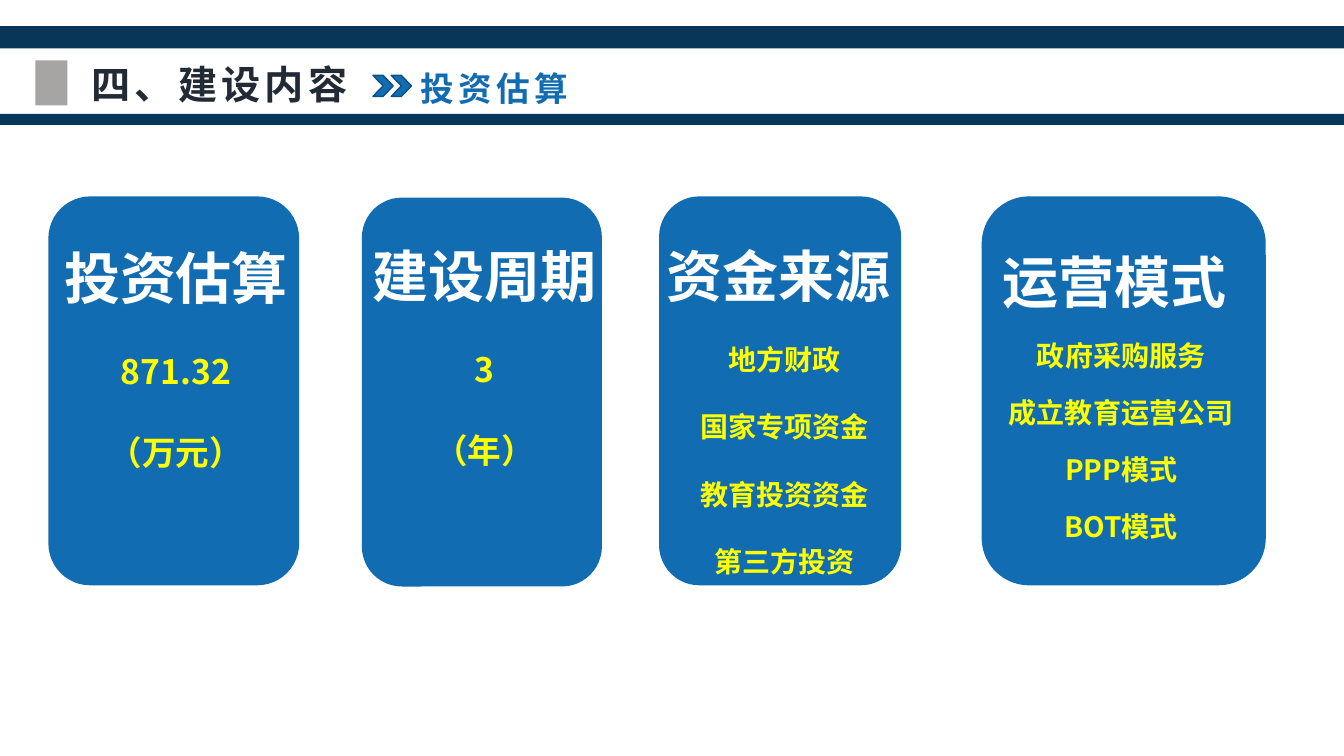
from dataclasses import dataclass

import pptx
import pptx.dml.color
import pptx.enum.shapes
import pptx.enum.text
import pptx.oxml.ns
import pptx.util
from lxml import etree
from pptx.util import Cm

RGBColor = pptx.dml.color.RGBColor
Shape = pptx.enum.shapes.MSO_SHAPE
Align = pptx.enum.text.PP_ALIGN
qn = pptx.oxml.ns.qn

NAVY = RGBColor(0x08, 0x36, 0x59)
BLUE = RGBColor(0x11, 0x6C, 0xB2)
EDGE_BLUE = RGBColor(0x0D, 0x50, 0x84)
GRAY = RGBColor(0x76, 0x71, 0x71)
INK = RGBColor(0x22, 0x2A, 0x35)
WHITE = RGBColor(0xFF, 0xFF, 0xFF)
YELLOW = RGBColor(0xFF, 0xFF, 0x00)
FONT = "Noto Sans CJK SC"


@dataclass(frozen=True)
class Box:
    left: float
    top: float
    width: float
    height: float

    def lengths(self) -> tuple:
        return tuple(Cm(v) for v in (self.left, self.top, self.width, self.height))


@dataclass(frozen=True)
class Topic:
    heading: str
    details: tuple[str, ...]
    card: Box
    text: Box
    detail_size: int
    detail_spacing: float


TOPICS = (
    Topic("投资估算", ("871.32", "（万元）"),
          Box(1.22, 4.95, 6.32, 9.8), Box(0.89, 4.32, 7.09, 7.77), 24, 2.0),
    Topic("建设周期", ("3", "（年）"),
          Box(9.12, 4.98, 6.05, 9.8), Box(8.76, 4.27, 6.91, 7.77), 24, 2.0),
    Topic("资金来源 ", ("地方财政", "国家专项资金", "教育投资资金", "第三方投资"),
          Box(16.61, 4.95, 6.1, 9.8), Box(16.26, 4.27, 7.04, 10.52), 20, 2.0),
    Topic("运营模式 ", ("政府采购服务", "成立教育运营公司", "PPP模式", "BOT模式"),
          Box(24.74, 4.95, 7.16, 9.8), Box(24.94, 4.42, 6.63, 11.53), 20, 1.7),
)
BARS = (Box(-0.1, 2.87, 34.16, 0.28), Box(-0.1, 0.66, 34.16, 0.56))
CHEVRON_LEFTS = (9.86, 9.4)


def add_filled(shapes, kind: Shape, box: Box, color: RGBColor):
    shape = shapes.add_shape(kind, *box.lengths())
    shape.shadow.inherit = False
    shape.fill.solid()
    shape.fill.fore_color.rgb = color
    shape.line.fill.background()
    return shape


def set_frame(frame) -> None:
    settings = {
        "word_wrap": True,
        "auto_size": pptx.enum.text.MSO_AUTO_SIZE.SHAPE_TO_FIT_TEXT,
        "vertical_anchor": pptx.enum.text.MSO_ANCHOR.TOP,
        "margin_left": Cm(0.25), "margin_right": Cm(0.25),
        "margin_top": Cm(0.13), "margin_bottom": Cm(0.13),
    }
    for key, value in settings.items():
        setattr(frame, key, value)


def write(paragraph, text: str, size: int, color: RGBColor, align: Align,
          line_spacing: float = 1.0, tracking: int = 0) -> None:
    """Fill a paragraph with one bold run; tracking is in points."""
    paragraph.alignment = align
    paragraph.line_spacing = line_spacing
    run = paragraph.add_run()
    run.text = text
    settings = {"size": pptx.util.Pt(size), "bold": True, "name": FONT}
    for key, value in settings.items():
        setattr(run.font, key, value)
    run.font.color.rgb = color
    properties = run.font._element
    etree.SubElement(properties, qn("a:ea")).set("typeface", FONT)
    if tracking:
        properties.set("spc", str(tracking * 100))


def add_header(slide) -> None:
    for bar in BARS:
        add_filled(slide.shapes, Shape.RECTANGLE, bar, NAVY)
    marker = add_filled(slide.shapes, Shape.RECTANGLE, Box(0.89, 1.52, 0.81, 1.14), GRAY)
    tint = marker._element.spPr.find(qn("a:solidFill"))[0]
    etree.SubElement(tint, qn("a:alpha")).set("val", "64000")

    title = slide.shapes.title
    title.left, title.top, title.width, title.height = Box(2.06, 1.4, 19.35, 1.45).lengths()
    set_frame(title.text_frame)
    write(title.text_frame.paragraphs[0], "四、建设内容", 28, INK, Align.LEFT, tracking=3)

    section = slide.shapes.add_textbox(*Box(10.36, 1.57, 13.23, 1.27).lengths())
    set_frame(section.text_frame)
    write(section.text_frame.paragraphs[0], "投资估算", 24, BLUE, Align.LEFT, tracking=3)

    arrows = slide.shapes.add_group_shape()
    for left in CHEVRON_LEFTS:
        chevron = add_filled(arrows.shapes, Shape.CHEVRON, Box(left, 1.9, 0.51, 0.53), BLUE)
        chevron.line.color.rgb = EDGE_BLUE
        chevron.line.width = pptx.util.Pt(1)


def add_topic(slide, topic: Topic) -> None:
    add_filled(slide.shapes, Shape.ROUNDED_RECTANGLE, topic.card, BLUE)
    frame = slide.shapes.add_textbox(*topic.text.lengths()).text_frame
    set_frame(frame)
    write(frame.paragraphs[0], topic.heading, 40, WHITE, Align.CENTER, 2.0)
    for detail in topic.details:
        write(frame.add_paragraph(), detail, topic.detail_size, YELLOW,
              Align.CENTER, topic.detail_spacing)


def main() -> None:
    deck = pptx.Presentation()
    deck.slide_width, deck.slide_height = Cm(33.87), Cm(19.05)
    slide = deck.slides.add_slide(deck.slide_layouts[5])
    add_header(slide)
    for topic in TOPICS:
        add_topic(slide, topic)
    deck.save("out.pptx")


if __name__ == "__main__":
    main()
